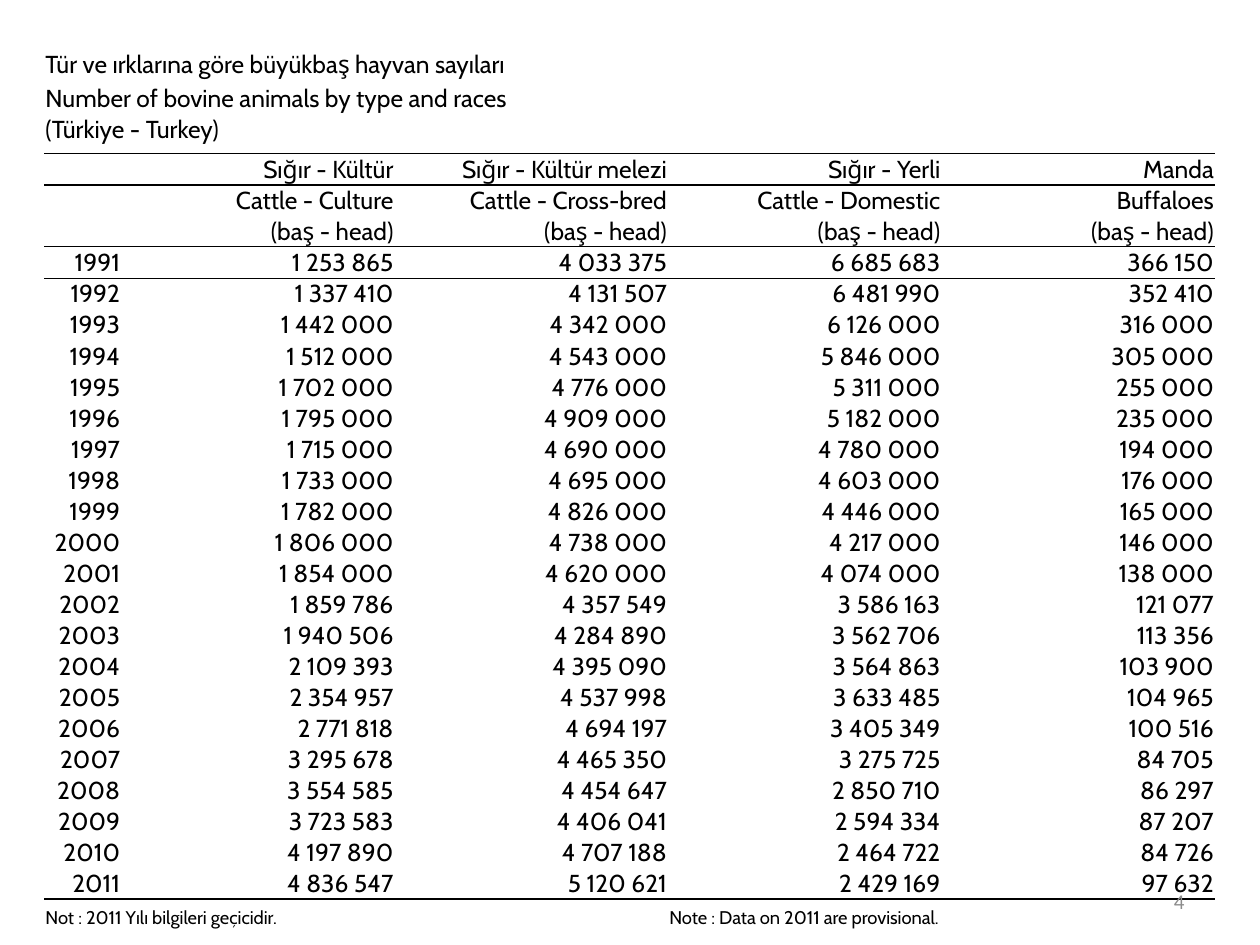
"""Build a slide with a table of bovine animal numbers by type and race."""
from lxml.etree import SubElement
from pptx import Presentation
from pptx.dml.color import RGBColor
from pptx.enum.text import MSO_ANCHOR as Anchor, PP_ALIGN as Align
from pptx.oxml.ns import qn
from pptx.util import Pt

BLACK = RGBColor(0x00, 0x00, 0x00)
GRAY = RGBColor(0x8C, 0x8C, 0x8C)
NO_STYLE = "{2D5ABB26-0587-4C30-8999-92F81FD0307C}"

TITLES = [
    "Tür ve ırklarına göre büyükbaş hayvan sayıları",
    "Number of bovine animals by type and races",
    "(Türkiye - Turkey)",
]
HEADERS = [
    ["", "Sığır - Kültür", "Sığır - Kültür melezi", "Sığır - Yerli", "Manda"],
    ["", "Cattle - Culture", "Cattle - Cross-bred", "Cattle - Domestic", "Buffaloes"],
    [""] + ["(baş - head)"] * 4,
]
FIRST_YEAR = 1991
HEADS = [
    ["1 253 865", "4 033 375", "6 685 683", "366 150"],
    ["1 337 410", "4 131 507", "6 481 990", "352 410"],
    ["1 442 000", "4 342 000", "6 126 000", "316 000"],
    ["1 512 000", "4 543 000", "5 846 000", "305 000"],
    ["1 702 000", "4 776 000", "5 311 000", "255 000"],
    ["1 795 000", "4 909 000", "5 182 000", "235 000"],
    ["1 715 000", "4 690 000", "4 780 000", "194 000"],
    ["1 733 000", "4 695 000", "4 603 000", "176 000"],
    ["1 782 000", "4 826 000", "4 446 000", "165 000"],
    ["1 806 000", "4 738 000", "4 217 000", "146 000"],
    ["1 854 000", "4 620 000", "4 074 000", "138 000"],
    ["1 859 786", "4 357 549", "3 586 163", "121 077"],
    ["1 940 506", "4 284 890", "3 562 706", "113 356"],
    ["2 109 393", "4 395 090", "3 564 863", "103 900"],
    ["2 354 957", "4 537 998", "3 633 485", "104 965"],
    ["2 771 818", "4 694 197", "3 405 349", "100 516"],
    ["3 295 678", "4 465 350", "3 275 725", "84 705"],
    ["3 554 585", "4 454 647", "2 850 710", "86 297"],
    ["3 723 583", "4 406 041", "2 594 334", "87 207"],
    ["4 197 890", "4 707 188", "2 464 722", "84 726"],
    ["4 836 547", "5 120 621", "2 429 169", "97 632"],
]
NOTES = [
    "Not : 2011 Yılı bilgileri geçicidir.", "", "",
    "Note : Data on 2011 are provisional.", "",
]
CELL_FORMAT = {
    "margin_left": Pt(0.7), "margin_right": Pt(0.7),
    "margin_top": Pt(0.7), "margin_bottom": Pt(0),
    "vertical_anchor": Anchor.BOTTOM,
}


def write(paragraph, text, alignment, size, name, color):
    paragraph.alignment = alignment
    if not text:
        paragraph._p.get_or_add_endParaRPr().set("sz", str(int(size * 100)))
        return
    run = paragraph.add_run()
    run.text = text
    for attribute, value in {"size": Pt(size), "name": name}.items():
        setattr(run.font, attribute, value)
    run.font.color.rgb = color


def add_border(cell, side, width):
    line = SubElement(cell._tc.get_or_add_tcPr(), qn(f"a:{side}"), w=str(Pt(width)))
    fill = SubElement(line, qn("a:solidFill"))
    SubElement(fill, qn("a:srgbClr"), val=str(BLACK))


presentation = Presentation()
presentation.slide_width, presentation.slide_height = Pt(720), Pt(540)
slide = presentation.slides.add_slide(presentation.slide_layouts[6])

title_rows = [[title] + [""] * 4 for title in TITLES]
year_rows = [[str(FIRST_YEAR + i)] + heads for i, heads in enumerate(HEADS)]
rows = title_rows + HEADERS + year_rows + [NOTES]
title_end = len(TITLES)
header_end = title_end + len(HEADERS)
note_row = len(rows) - 1
rules = {title_end: 1, header_end: 0.5, note_row: 1}

column_widths = [44] + [156.25] * 4
row_heights = [19.5, 19.5, 23] + [17.45] * (len(rows) - title_end)
shape = slide.shapes.add_table(
    len(rows), len(column_widths), Pt(25.3), Pt(25.9),
    Pt(sum(column_widths)), Pt(sum(row_heights)))
table = shape.table
table.first_row = table.horz_banding = False
table._tbl.tblPr.find(qn("a:tableStyleId")).text = NO_STYLE
for column, width in zip(table.columns, column_widths):
    column.width = Pt(width)

for i, (row, texts) in enumerate(zip(table.rows, rows)):
    row.height = Pt(row_heights[i])
    alignment = Align.RIGHT if title_end <= i < note_row else Align.LEFT
    size = 10.5 if i == note_row else 14
    for cell, text in zip(row.cells, texts):
        for attribute, value in CELL_FORMAT.items():
            setattr(cell, attribute, value)
        if i in rules:
            add_border(cell, "lnT", rules[i])
        if i + 1 in rules:
            add_border(cell, "lnB", rules[i + 1])
        cell.fill.background()
        write(cell.text_frame.paragraphs[0], text, alignment, size, "Cabin", BLACK)

table.cell(title_end - 1, 0).vertical_anchor = Anchor.TOP
for row_index, first, last in [(0, 0, 2), (1, 0, 2), (2, 0, 1), (note_row, 0, 1), (note_row, 3, 4)]:
    table.cell(row_index, first).merge(table.cell(row_index, last))

page_number = slide.shapes.add_textbox(Pt(516), Pt(500.5), Pt(168), Pt(28.75))
page_number.text_frame.word_wrap = True
page_number.text_frame.vertical_anchor = Anchor.MIDDLE
write(page_number.text_frame.paragraphs[0], "4", Align.RIGHT, 12, "Calibri", GRAY)

presentation.save("out.pptx")
